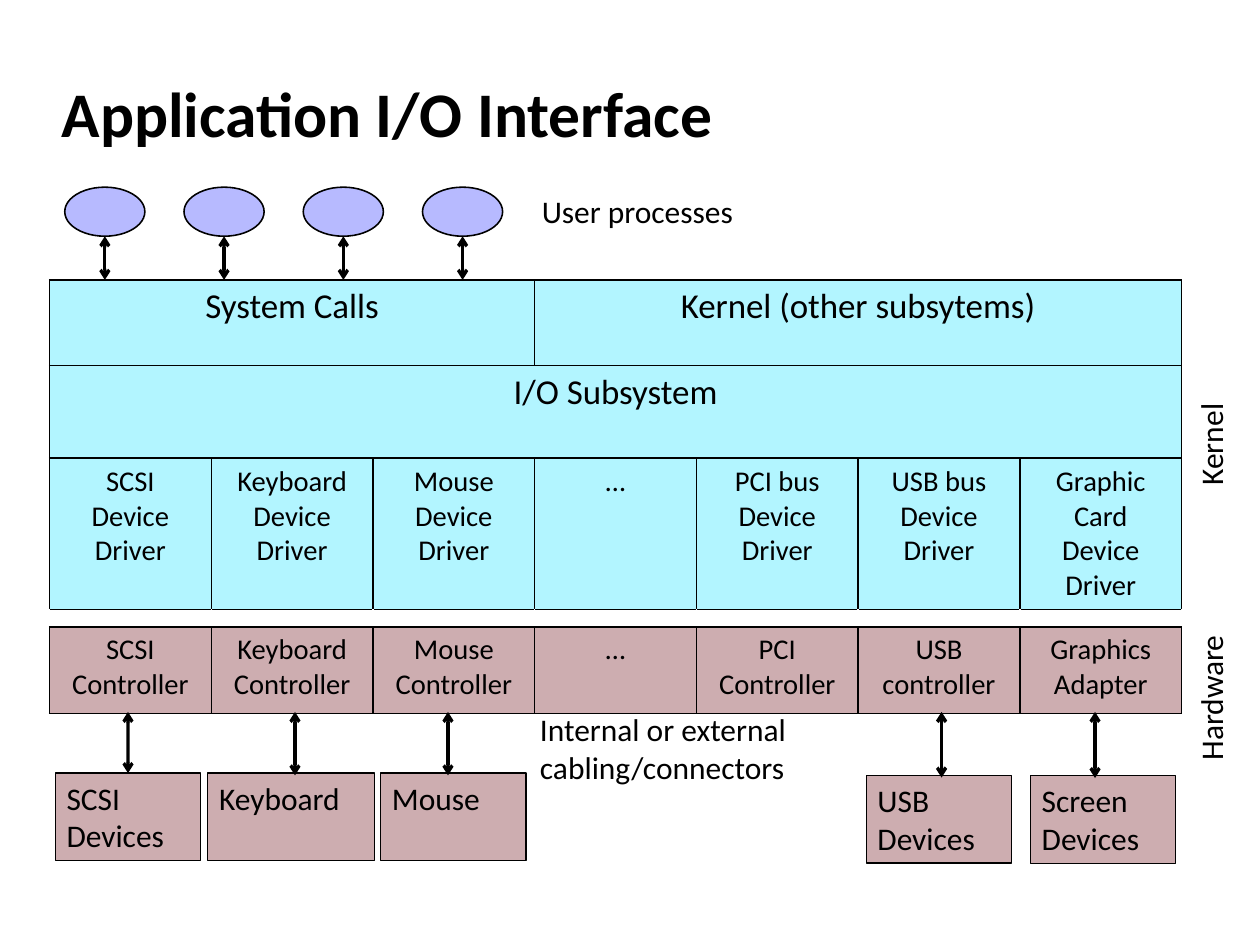
from lxml import etree
from pptx import Presentation
from pptx.dml.color import RGBColor
from pptx.enum.shapes import MSO_CONNECTOR, MSO_SHAPE
from pptx.enum.text import MSO_ANCHOR, MSO_AUTO_SIZE, PP_ALIGN
from pptx.oxml.ns import qn
from pptx.util import Cm, Pt

LEFT, CENTER = PP_ALIGN.LEFT, PP_ALIGN.CENTER
TOP, MIDDLE = MSO_ANCHOR.TOP, MSO_ANCHOR.MIDDLE
NO_FIT = MSO_AUTO_SIZE.NONE
STRAIGHT = MSO_CONNECTOR.STRAIGHT
RECTANGLE, OVAL = MSO_SHAPE.RECTANGLE, MSO_SHAPE.OVAL

FONT = "Calibri"
LABEL_SIZE = 19.8
COLORS = {
    "ink": "000000",
    "gap": "FFFFFF",
    "kernel": "B2F5FF",
    "hardware": "CDADB0",
    "process": "B7BAFF",
}
RGB = {name: RGBColor.from_string(value) for name, value in COLORS.items()}


def write(frame, text, size=LABEL_SIZE, bold=False, align=LEFT, anchor=TOP, wrap=True):
    frame.word_wrap = wrap
    frame.vertical_anchor = anchor
    para = frame.paragraphs[0]
    para.text = text
    para.alignment = align
    for span in para.runs:
        span.font.name = FONT
        span.font.size = Pt(size)
        span.font.bold = bold
        span.font.color.rgb = RGB["ink"]


def add_arrow(page, x, bottom, top):
    arrow = page.shapes.add_connector(STRAIGHT, Cm(x), Cm(bottom), Cm(x), Cm(top))
    arrow.line.color.rgb = RGB["ink"]
    arrow.line.width = Pt(2)
    outline = arrow.line._get_or_add_ln()
    for end in ("a:headEnd", "a:tailEnd"):
        etree.SubElement(outline, qn(end), type="arrow")
    etree.SubElement(arrow._element.spPr, qn("a:effectLst"))
    return arrow


deck = Presentation()
deck.slide_width, deck.slide_height = Cm(28), Cm(21)
page = deck.slides.add_slide(deck.slide_layouts[5])

# Title
title = page.shapes.title
title.left, title.top, title.width, title.height = Cm(1.09), Cm(1.33), Cm(23.24), Cm(2.34)
frame = title.text_frame
frame.auto_size = NO_FIT
frame.margin_left = frame.margin_right = Cm(0.28)
write(frame, "Application I/O Interface", size=40, bold=True, anchor=MIDDLE)

# Layer table: kernel rows, a white gap, hardware row
TABLE_LEFT, TABLE_TOP, TABLE_WIDTH = 1.1, 6.22, 25.16
layers = [
    (1.9, "kernel", 22, ["System Calls", "", "", "Kernel (other subsytems)", "", "", ""]),
    (2.06, "kernel", 22, ["I/O Subsystem", "", "", "", "", "", ""]),
    (3.36, "kernel", 18, [
        "SCSI\nDevice Driver", "Keyboard\nDevice Driver", "Mouse\nDevice Driver", "…",
        "PCI bus\nDevice\nDriver", "USB bus\nDevice\nDriver", "Graphic Card Device Driver"]),
    (0.39, "gap", 1, [""] * 7),
    (1.93, "hardware", 18, [
        "SCSI Controller", "Keyboard Controller", "Mouse Controller", "…",
        "PCI\nController", "USB controller", "Graphics Adapter"]),
]
table_height = sum(layer[0] for layer in layers)
table = page.shapes.add_table(
    len(layers), 7, Cm(TABLE_LEFT), Cm(TABLE_TOP), Cm(TABLE_WIDTH), Cm(table_height)).table
table.first_row = table.horz_banding = False
for column in table.columns:
    column.width = Cm(TABLE_WIDTH / 7)

for row, (height, kind, size, texts) in enumerate(layers):
    table.rows[row].height = Cm(height)
    for column, text in enumerate(texts):
        cell = table.cell(row, column)
        cell.margin_left = cell.margin_right = Cm(0.28)
        cell.margin_top = cell.margin_bottom = Cm(0 if kind == "gap" else 0.13)
        if text:
            write(cell.text_frame, text, size=size, align=CENTER)
        else:
            etree.SubElement(cell.text_frame.paragraphs[0]._p, qn("a:endParaRPr"), sz="100")
        for side in "LRTB":
            color = "gap" if kind == "gap" and side in "LR" else "ink"
            border = etree.SubElement(
                cell._tc.get_or_add_tcPr(), qn("a:ln" + side), w=str(Pt(1)))
            paint = etree.SubElement(border, qn("a:solidFill"))
            etree.SubElement(paint, qn("a:srgbClr"), val=COLORS[color])
        if kind == "gap":
            cell.fill.background()
        else:
            cell.fill.solid()
            cell.fill.fore_color.rgb = RGB[kind]

for row, first, last in [(0, 0, 2), (0, 3, 6), (1, 0, 6)]:
    table.cell(row, first).merge(table.cell(row, last))

# Devices and their arrows to the controllers (shift moves an arrow off the middle)
DEVICE_HEIGHT = 1.95
controller_bottom = TABLE_TOP + table_height
devices = [
    ("SCSI\nDevices", 1.23, 17.18, 3.23, 0),
    ("Keyboard", 4.62, 17.18, 3.71, 0.08),
    ("Mouse", 8.46, 17.18, 3.23, -0.12),
    ("USB\nDevices", 19.25, 17.23, 3.23, 0.06),
    ("Screen\nDevices", 22.9, 17.24, 3.23, -0.18),
]
for text, left, top, width, shift in devices:
    box = page.shapes.add_shape(RECTANGLE, Cm(left), Cm(top), Cm(width), Cm(DEVICE_HEIGHT))
    box.shadow.inherit = False
    box.fill.solid()
    box.fill.fore_color.rgb = RGB["hardware"]
    box.line.color.rgb = RGB["ink"]
    box.line.width = Pt(0.75)
    write(box.text_frame, text)
    arrow = add_arrow(page, left + width / 2 + shift, top + 0.05, controller_bottom - 0.04)
    if not shift:
        arrow.begin_connect(box, 0)

# User processes and their arrows to the system calls
OVAL_LEFT, OVAL_TOP, OVAL_WIDTH, OVAL_HEIGHT, OVAL_STEP = 1.44, 4.16, 1.78, 1.09, 2.65
for index in range(4):
    left = OVAL_LEFT + index * OVAL_STEP
    process = page.shapes.add_shape(
        OVAL, Cm(left), Cm(OVAL_TOP), Cm(OVAL_WIDTH), Cm(OVAL_HEIGHT))
    process.shadow.inherit = False
    process.fill.solid()
    process.fill.fore_color.rgb = RGB["process"]
    process.line.color.rgb = RGB["ink"]
    process.line.width = Pt(1)
    add_arrow(page, left + OVAL_WIDTH / 2, TABLE_TOP, OVAL_TOP + OVAL_HEIGHT)

# Labels
labels = [
    ("Kernel", 25.73, 9.32, 2.34, 1.09, 270, False),
    ("Hardware", 25.24, 14.94, 3.33, 1.09, 270, False),
    ("User processes", 11.79, 4.14, 4.8, 1.09, 0, False),
    ("Internal or external cabling/connectors", 11.75, 15.65, 7.04, 1.96, 0, True),
]
for text, left, top, width, height, rotation, wrap in labels:
    label = page.shapes.add_textbox(Cm(left), Cm(top), Cm(width), Cm(height))
    label.rotation = rotation
    write(label.text_frame, text, wrap=wrap)

deck.save("out.pptx")
